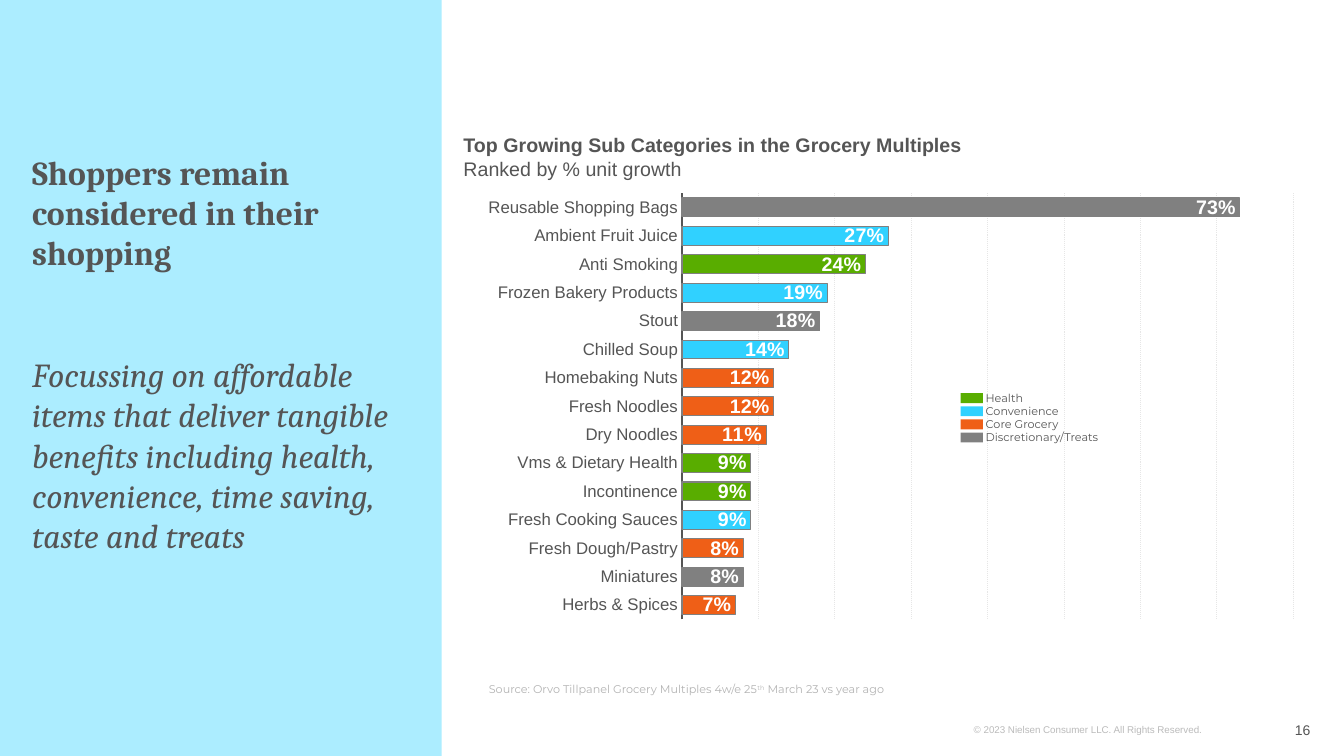
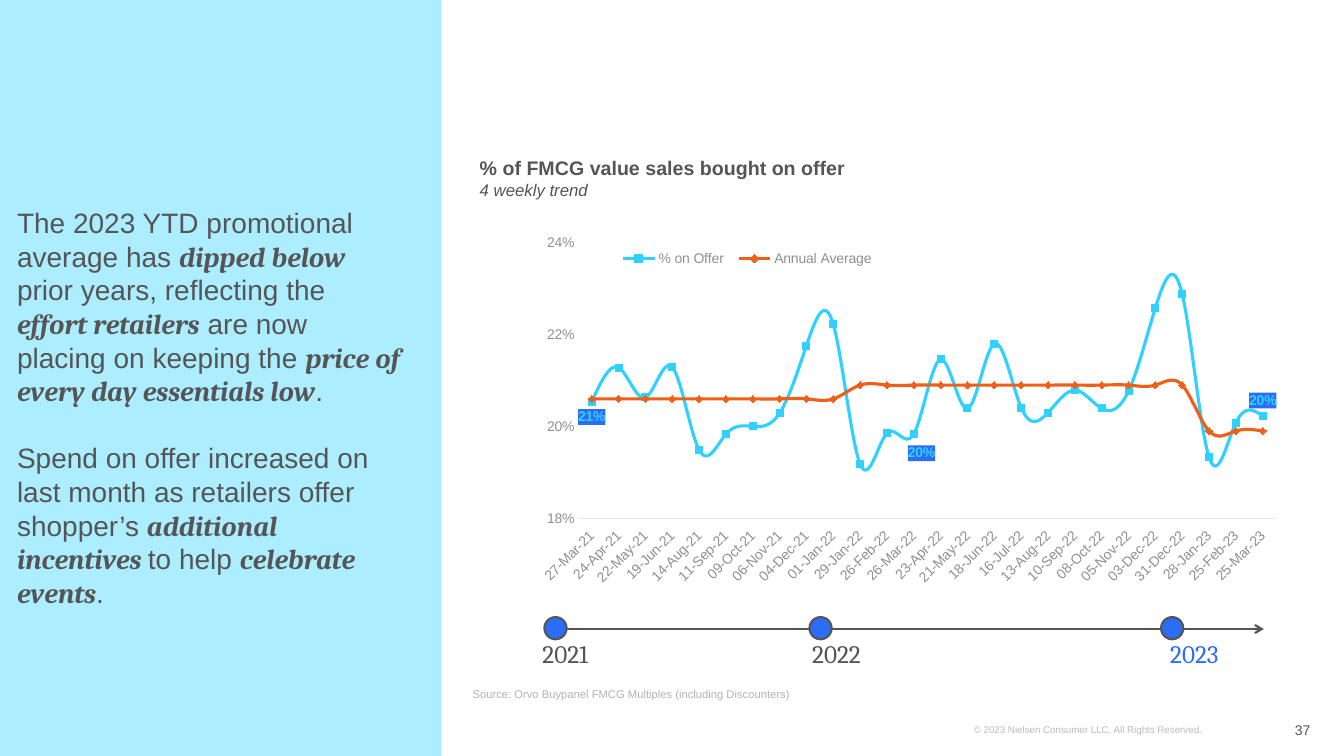
"""Build two grocery market slides: growing categories and promotional trend."""
from lxml import etree
from pptx import Presentation
from pptx.chart.data import CategoryChartData
from pptx.dml.color import RGBColor
from pptx.enum.chart import (XL_CHART_TYPE, XL_LABEL_POSITION, XL_LEGEND_POSITION,
                             XL_TICK_LABEL_POSITION, XL_TICK_MARK)
from pptx.enum.dml import MSO_LINE
from pptx.enum.shapes import MSO_CONNECTOR, MSO_SHAPE
from pptx.enum.text import MSO_ANCHOR, PP_ALIGN
from pptx.oxml.ns import qn
from pptx.util import Cm, Pt

BAR, LINE = XL_CHART_TYPE.BAR_STACKED, XL_CHART_TYPE.LINE
INSIDE_END = XL_LABEL_POSITION.INSIDE_END
ABOVE, BELOW = XL_LABEL_POSITION.ABOVE, XL_LABEL_POSITION.BELOW
LEGEND_BOTTOM = XL_LEGEND_POSITION.BOTTOM
LOW, NO_TICK = XL_TICK_LABEL_POSITION.LOW, XL_TICK_MARK.NONE
DOTTED = MSO_LINE.ROUND_DOT
STRAIGHT = MSO_CONNECTOR.STRAIGHT
RECT, OVAL = MSO_SHAPE.RECTANGLE, MSO_SHAPE.OVAL
TOP, MIDDLE, BOTTOM = MSO_ANCHOR.TOP, MSO_ANCHOR.MIDDLE, MSO_ANCHOR.BOTTOM
LEFT, RIGHT = PP_ALIGN.LEFT, PP_ALIGN.RIGHT

WHITE = RGBColor(0xFF, 0xFF, 0xFF)
PANEL = RGBColor(0xAC, 0xED, 0xFF)
DARK = RGBColor(0x55, 0x55, 0x55)
AXIS_GREY = RGBColor(0x90, 0x90, 0x90)
SOURCE_GREY = RGBColor(0xB3, 0xB3, 0xB3)
FOOTER_GREY = RGBColor(0xBB, 0xBB, 0xBB)
GRID_GREY = RGBColor(0xE6, 0xE6, 0xE6)
BLUE = RGBColor(0x2C, 0x6D, 0xF6)
GREEN = RGBColor(0x59, 0xAD, 0x00)
SKY = RGBColor(0x30, 0xD1, 0xFF)
ORANGE = RGBColor(0xEF, 0x5F, 0x17)
GREY = RGBColor(0x80, 0x80, 0x80)

SANS, SERIF, LABEL = "Arial", "Cambria", "Montserrat"

GROUPS = [("Health", GREEN), ("Convenience", SKY), ("Core Grocery", ORANGE),
          ("Discretionary/Treats", GREY)]
GROWTH = [
    ("Reusable Shopping Bags", 0.73, GREY), ("Ambient Fruit Juice", 0.27, SKY),
    ("Anti Smoking", 0.24, GREEN), ("Frozen Bakery Products", 0.19, SKY),
    ("Stout", 0.18, GREY), ("Chilled Soup", 0.14, SKY),
    ("Homebaking Nuts", 0.12, ORANGE), ("Fresh Noodles", 0.12, ORANGE),
    ("Dry Noodles", 0.11, ORANGE), ("Vms & Dietary Health", 0.09, GREEN),
    ("Incontinence", 0.09, GREEN), ("Fresh Cooking Sauces", 0.09, SKY),
    ("Fresh Dough/Pastry", 0.08, ORANGE), ("Miniatures", 0.08, GREY),
    ("Herbs & Spices", 0.07, ORANGE),
]
PERIODS = [
    "27-Mar-21", "24-Apr-21", "22-May-21", "19-Jun-21", "14-Aug-21", "11-Sep-21",
    "09-Oct-21", "06-Nov-21", "04-Dec-21", "01-Jan-22", "29-Jan-22", "26-Feb-22",
    "26-Mar-22", "23-Apr-22", "21-May-22", "18-Jun-22", "16-Jul-22", "13-Aug-22",
    "10-Sep-22", "08-Oct-22", "05-Nov-22", "03-Dec-22", "31-Dec-22", "28-Jan-23",
    "25-Feb-23", "25-Mar-23",
]
ON_OFFER = [
    0.2054, 0.2128, 0.2063, 0.2129, 0.1949, 0.1983, 0.2, 0.2029, 0.2176, 0.2222,
    0.1918, 0.1985, 0.1984, 0.2146, 0.2039, 0.218, 0.2041, 0.203, 0.2079, 0.2039,
    0.2077, 0.2258, 0.2288, 0.1933, 0.2008, 0.2023,
]
AVERAGE = [0.206] * 10 + [0.209] * 13 + [0.199] * 3


def set_font(font, size, color, name=SANS, bold=False, italic=False):
    """Apply size, colour, face and style to a font."""
    font.size, font.name, font.bold, font.italic = Pt(size), name, bold, italic
    font.color.rgb = color


def add_text(s, box, paras, size=10, color=DARK, name=SANS, bold=False, italic=False,
             anchor=TOP, align=LEFT, gap=0):
    """Add a text box; each paragraph is a string or a list of (text, format) runs."""
    tf = s.shapes.add_textbox(*map(Cm, box)).text_frame
    tf.word_wrap = True
    tf.vertical_anchor = anchor
    tf.margin_left = tf.margin_right = 0
    base = dict(size=size, color=color, name=name, bold=bold, italic=italic)
    for i, runs in enumerate(paras):
        p = tf.paragraphs[0] if i == 0 else tf.add_paragraph()
        p.alignment = align
        if i and gap:
            p.space_before = Pt(gap)
        for text, fmt in ([(runs, {})] if isinstance(runs, str) else runs):
            r = p.add_run()
            r.text = text
            fmt = {**base, **fmt}
            raised = fmt.pop("raised", False)
            set_font(r.font, **fmt)
            if raised:
                r._r.get_or_add_rPr().set("baseline", "30000")


def add_block(s, kind, box, fill, line=None):
    """Add a flat filled shape with an optional outline."""
    sp = s.shapes.add_shape(kind, *map(Cm, box))
    sp.shadow.inherit = False
    sp.fill.solid()
    sp.fill.fore_color.rgb = fill
    if line is None:
        sp.line.fill.background()
    else:
        sp.line.color.rgb = line
        sp.line.width = Pt(1.5)


def add_arrow(s, x1, x2, y):
    """Add a horizontal line with an open arrowhead at its right end."""
    sp = s.shapes.add_connector(STRAIGHT, Cm(x1), Cm(y), Cm(x2), Cm(y))
    sp.line.color.rgb = DARK
    sp.line.width = Pt(1.5)
    etree.SubElement(sp.line._get_or_add_ln(), qn("a:tailEnd"), type="arrow")
    etree.SubElement(sp._element.spPr, qn("a:effectLst"))


def set_layout(parent, index, x, y, w=None, h=None, inner=False):
    """Give a chart part a manual layout in fractions of the chart."""
    for old in parent.findall(qn("c:layout")):
        parent.remove(old)
    layout = etree.Element(qn("c:layout"))
    manual = etree.SubElement(layout, qn("c:manualLayout"))
    if inner:
        etree.SubElement(manual, qn("c:layoutTarget"), val="inner")
    if w is not None:
        for tag in ("c:xMode", "c:yMode"):
            etree.SubElement(manual, qn(tag), val="edge")
    for tag, value in zip("xywh", (x, y, w, h)):
        if value is not None:
            etree.SubElement(manual, qn("c:" + tag), val=str(value))
    parent.insert(index, layout)


def add_chart(s, kind, box, cats, series, plot_box):
    """Add a chart with percent values and a fixed plot area."""
    data = CategoryChartData(number_format="0%")
    data.categories = cats
    for name, values in series:
        data.add_series(name, values)
    chart = s.shapes.add_chart(kind, *map(Cm, box), data).chart
    chart.has_title = False
    chart.has_legend = False
    set_font(chart.font, 10, DARK)
    chart.plots[0].vary_by_categories = False
    for axis in (chart.category_axis, chart.value_axis):
        axis.major_tick_mark = axis.minor_tick_mark = NO_TICK
    set_layout(chart._chartSpace.chart.plotArea, 0, *plot_box, inner=True)
    return chart


def style_line(line, color, width):
    """Set the colour and width of a line."""
    line.color.rgb = color
    line.width = Pt(width)


def add_growth_chart(s):
    """Add the ranked bar chart with bars coloured by group."""
    cats, values, colors = zip(*GROWTH)
    chart = add_chart(s, BAR, (11.91, 4.65, 21.11, 11.07), cats,
                      [("Series 1", values)], (0.25, 0.02, 0.73, 0.97))
    cat, val, plot = chart.category_axis, chart.value_axis, chart.plots[0]
    cat.reverse_order = True
    set_font(cat.tick_labels.font, 12, DARK)
    style_line(cat.format.line, DARK, 2)
    val.visible = False
    val.minimum_scale, val.maximum_scale, val.major_unit = 0, 0.8, 0.1
    val.has_major_gridlines = True
    style_line(val.major_gridlines.format.line, GRID_GREY, 0.75)
    val.major_gridlines.format.line.dash_style = DOTTED
    plot.gap_width, plot.overlap = 50, 100
    bars = plot.series[0]
    for i, color in enumerate(colors):
        fmt = bars.points[i].format
        fmt.fill.solid()
        fmt.fill.fore_color.rgb = color
        style_line(fmt.line, GREY, 0.75)
    labels = bars.data_labels
    labels.show_value = True
    labels.number_format, labels.number_format_is_linked = "0%", False
    labels.position = INSIDE_END
    set_font(labels.font, 14, WHITE, bold=True)


def add_point_label(series, index, position, offset=None):
    """Label one point with its value on a blue field."""
    label = series.points[index].data_label
    set_font(label.font, 10, SKY, bold=True)
    label.position = position
    dlbl = next(d for d in series._element.iter(qn("c:dLbl"))
                if d.find(qn("c:idx")).get("val") == str(index))
    sp_pr = etree.Element(qn("c:spPr"))
    fill = etree.SubElement(sp_pr, qn("a:solidFill"))
    etree.SubElement(fill, qn("a:srgbClr"), val=str(BLUE))
    dlbl.find(qn("c:txPr")).addprevious(sp_pr)
    if offset:
        set_layout(dlbl, 1, *offset)


def add_offer_chart(s):
    """Add the trend chart of offer share against its annual average."""
    chart = add_chart(s, LINE, (13.51, 5.03, 19.35, 10.26), PERIODS,
                      [("% on Offer", ON_OFFER), ("Annual Average", AVERAGE)],
                      (0.055, 0.106, 0.909, 0.677))
    cat, val = chart.category_axis, chart.value_axis
    for axis in (cat, val):
        set_font(axis.tick_labels.font, 10, AXIS_GREY)
    cat.tick_label_position = LOW
    cat._element.find(qn("c:txPr")).find(qn("a:bodyPr")).set("rot", "-2700000")
    style_line(cat.format.line, GRID_GREY, 0.75)
    val.has_major_gridlines = False
    val.minimum_scale, val.maximum_scale, val.major_unit = 0.18, 0.24, 0.02
    val.format.line.fill.background()
    chart.has_legend = True
    legend = chart.legend
    legend.position = LEGEND_BOTTOM
    legend.include_in_layout = False
    set_font(legend.font, 10, AXIS_GREY)
    set_layout(legend._element, 1, 0.1, 0.11, 0.35, 0.07)
    for series, color in zip(chart.plots[0].series, (SKY, ORANGE)):
        series.smooth = True
        series.marker.style = None
        style_line(series.format.line, color, 2.25)
    offer = chart.plots[0].series[0]
    offer.data_labels.show_value = False
    add_point_label(offer, 0, BELOW)
    add_point_label(offer, 12, BELOW, (0.01, 0.01))
    add_point_label(offer, 25, ABOVE)


def add_base(prs, number):
    """Add a slide with the side panel, copyright line and slide number."""
    s = prs.slides.add_slide(prs.slide_layouts[6])
    add_block(s, RECT, (0, 0, 11.13, 19.05), PANEL)
    add_text(s, (24.54, 18.11, 7.21, 0.56),
             ["© 2023 Nielsen Consumer LLC. All Rights Reserved."], size=7, color=FOOTER_GREY)
    add_text(s, (30.51, 17.88, 2.51, 1.02), [str(number)], anchor=MIDDLE, align=RIGHT)
    return s


def build_growth(prs):
    """Build the slide on the fastest growing sub categories."""
    s = add_base(prs, 16)
    add_growth_chart(s)
    add_text(s, (0.81, 3.81, 9.73, 10.31), [
        [("Shoppers remain considered in their shopping", {"bold": True})],
        [("Focussing on affordable items that deliver tangible benefits including "
          "health, convenience, time saving, taste and treats", {"italic": True})],
    ], size=24, name=SERIF, anchor=BOTTOM, gap=58)
    add_text(s, (12.32, 16.64, 20.7, 1.02), [[
        ("Source: Orvo Tillpanel Grocery Multiples 4w/e 25", {}), ("th", {"raised": True}),
        (" March 23 vs year ago", {})]], size=8, color=SOURCE_GREY, name=LABEL, anchor=BOTTOM)
    add_text(s, (11.68, 3.23, 20.6, 1.45), [
        [("Top Growing Sub Categories in the Grocery Multiples", {"bold": True})],
        "Ranked by % unit growth"], size=14)
    for i, (label, color) in enumerate(GROUPS):
        y = 9.91 + 0.33 * i
        add_block(s, RECT, (24.21, y, 0.56, 0.25), color)
        add_text(s, (24.84, y - 0.18, 3.4, 0.61), [label], size=8, name=LABEL)


def build_offer(prs):
    """Build the slide on value sales bought on offer."""
    s = add_base(prs, 37)
    strong = {"name": SERIF, "bold": True, "italic": True}
    add_text(s, (0.43, 5, 9.73, 10.47), [
        [("The 2023 YTD promotional average has ", {}), ("dipped below ", strong),
         ("prior years, reflecting the ", {}), ("effort retailers", strong),
         (" are now placing on keeping the ", {}),
         ("price of every day essentials low", strong), (".", {})],
        [("Spend on offer increased on last month as retailers offer shopper’s ", {}),
         ("additional incentives ", strong), ("to help ", {}),
         ("celebrate events", strong), (".", {})],
    ], size=20, anchor=BOTTOM, gap=24)
    add_text(s, (11.91, 16.76, 21.11, 1.02),
             ["Source: Orvo Buypanel FMCG Multiples (including Discounters)"],
             size=8, color=SOURCE_GREY, anchor=BOTTOM)
    add_text(s, (12.09, 3.81, 21.13, 1.5), [
        [("% of FMCG value sales bought on offer", {"bold": True})],
        [("4 weekly trend", {"size": 12, "italic": True})]], size=14)
    add_offer_chart(s)
    add_arrow(s, 13.94, 31.85, 15.85)
    for year, dot_x, text_x, color in (("2021", 13.72, 13.67, DARK),
                                       ("2022", 20.4, 20.47, DARK),
                                       ("2023", 29.26, 29.49, BLUE)):
        add_block(s, OVAL, (dot_x, 15.55, 0.56, 0.56), BLUE, DARK)
        add_text(s, (text_x, 15.75, 1.65, 1.22), [year], size=18, color=color,
                 name=SERIF, anchor=BOTTOM)


def main():
    """Build and save the presentation."""
    prs = Presentation()
    prs.slide_width, prs.slide_height = Cm(33.87), Cm(19.05)
    build_growth(prs)
    build_offer(prs)
    prs.save("out.pptx")


if __name__ == "__main__":
    main()
